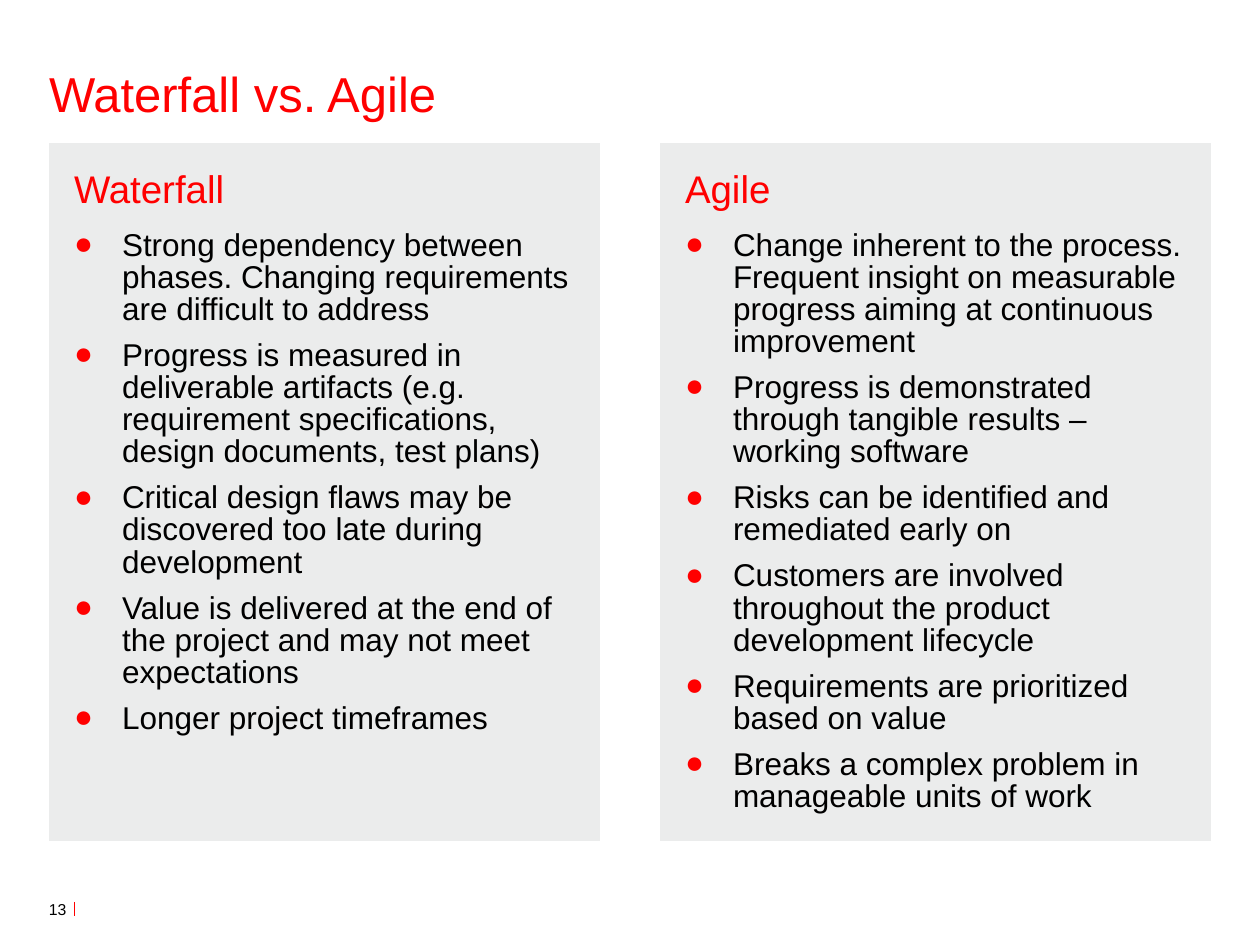
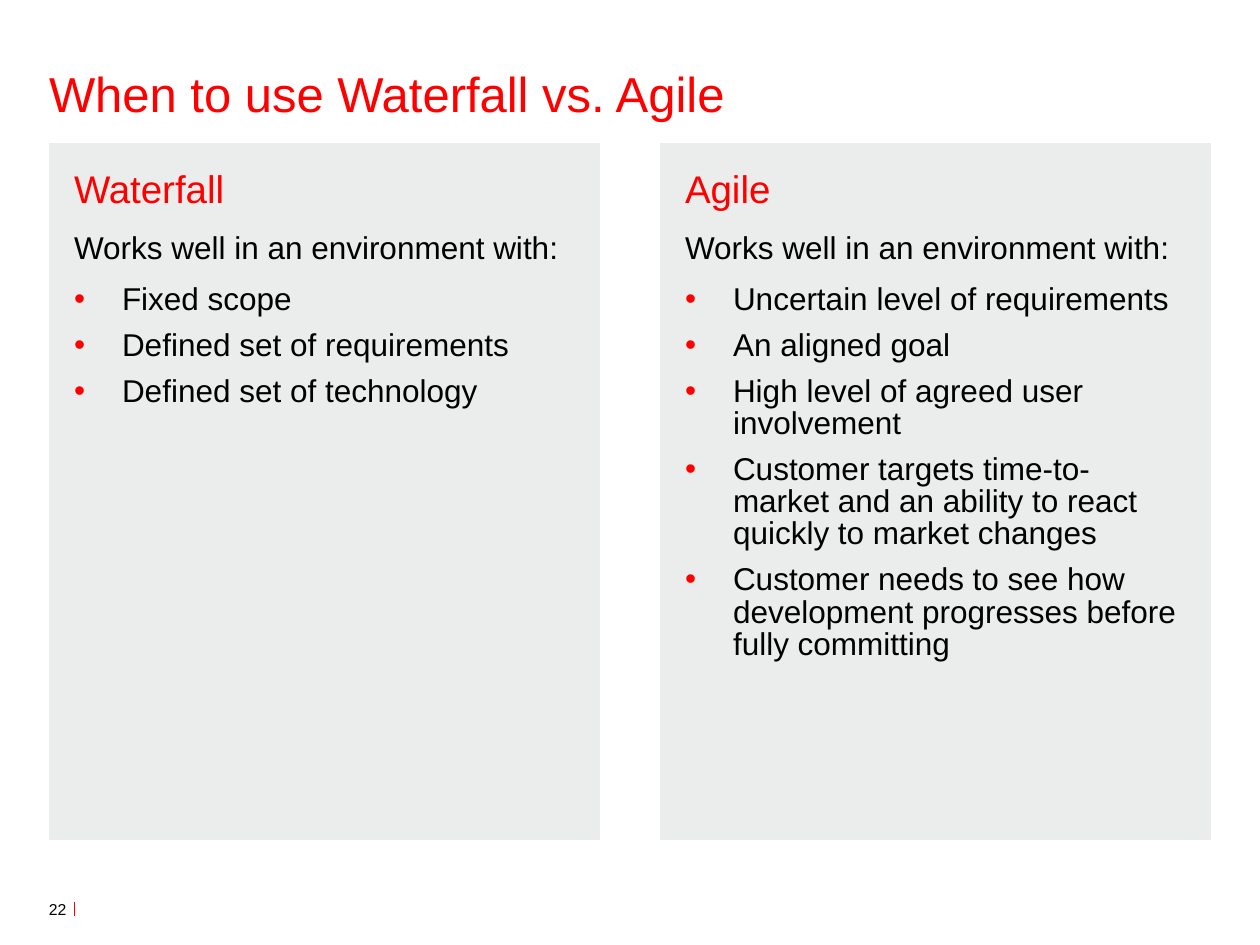
"""Build two slides that compare Waterfall and Agile in paired panels."""
from lxml import etree
from pptx import Presentation
from pptx import util as u
from pptx.dml.color import RGBColor
from pptx.enum import shapes, text
from pptx.oxml.ns import qn

RED = RGBColor(0xFF, 0x00, 0x00)
BLACK = RGBColor(0x00, 0x00, 0x00)
GREY = RGBColor(0xEB, 0xEC, 0xEC)
FONT = "Arial"
LEFT, TOP, WIDE, STEP = 49, 143, 551, 611
PAD, HANG = 25, 48

LEAD = "Works well in an environment with:"
SLIDES = [
    ("Waterfall vs. Agile", "13", "●", 698, [
        ("Waterfall", [], [
            "Strong dependency between phases. Changing requirements are difficult to address",
            "Progress is measured in deliverable artifacts (e.g. requirement specifications, "
            "design documents, test plans)",
            "Critical design flaws may be discovered too late during development",
            "Value is delivered at the end of the project and may not meet expectations",
            "Longer project timeframes"]),
        ("Agile", [], [
            "Change inherent to the process. Frequent insight on measurable progress "
            "aiming at continuous improvement",
            "Progress is demonstrated through tangible results – working software",
            "Risks can be identified and remediated early on",
            "Customers are involved throughout the product development lifecycle",
            "Requirements are prioritized based on value",
            "Breaks a complex problem in manageable units of work"])]),
    ("When to use Waterfall vs. Agile", "22", "•", 697, [
        ("Waterfall", [LEAD], [
            "Fixed scope",
            "Defined set of requirements",
            "Defined set of technology"]),
        ("Agile", [LEAD], [
            "Uncertain level of requirements",
            "An aligned goal",
            "High level of agreed user involvement",
            "Customer targets time-to-market and an ability to react quickly to market changes",
            "Customer needs to see how development progresses before fully committing"])]),
]


def px(n):
    return u.Emu(round(n * 914400 / 126))


def style(frame, pad, anchor, looks):
    frame.word_wrap = True
    frame.auto_size = text.MSO_AUTO_SIZE.NONE
    frame.vertical_anchor = anchor
    frame.margin_left = frame.margin_right = px(pad)
    frame.margin_top = frame.margin_bottom = px(pad)
    for para, (size, color) in zip(frame.paragraphs, looks):
        para.alignment = text.PP_ALIGN.LEFT
        for run in para.runs:
            run.font.name = FONT
            run.font.size = u.Pt(size)
            run.font.color.rgb = color


deck = Presentation()
deck.slide_width, deck.slide_height = px(1260), px(945)

for name, page, mark, high, panels in SLIDES:
    slide = deck.slides.add_slide(deck.slide_layouts[5])

    title = slide.shapes.title
    title.left, title.top, title.width, title.height = px(LEFT), px(58), px(1161), px(69)
    title.text_frame.text = name
    style(title.text_frame, 0, text.MSO_ANCHOR.MIDDLE, [(28, RED)])

    rule = slide.shapes.add_connector(
        shapes.MSO_CONNECTOR.STRAIGHT, px(74), px(902), px(74), px(916))
    rule.line.color.rgb = RED
    rule.line.width = u.Pt(0.5)
    etree.SubElement(rule._element.spPr, qn("a:effectLst"))

    foot = slide.shapes.add_textbox(px(LEFT), px(900), px(25), px(25))
    foot.text_frame.text = page
    style(foot.text_frame, 0, text.MSO_ANCHOR.TOP, [(9, BLACK)])

    for col, (head, leads, points) in enumerate(panels):
        panel = slide.shapes.add_shape(
            shapes.MSO_SHAPE.RECTANGLE, px(LEFT + col * STEP), px(TOP), px(WIDE), px(high))
        panel.shadow.inherit = False
        panel.fill.solid()
        panel.fill.fore_color.rgb = GREY
        panel.line.fill.background()

        frame = panel.text_frame
        lines = [head] + leads + points
        frame.text = "\n".join(lines)
        style(frame, PAD, text.MSO_ANCHOR.TOP, [(22, RED)] + [(18, BLACK)] * (len(lines) - 1))
        first = len(lines) - len(points)
        for para in frame.paragraphs[:first]:
            para.line_spacing = 0.95
            para.space_after = u.Pt(10.6)
        for para in frame.paragraphs[first:]:
            para.level = 1
            para.line_spacing = 0.85
            para.space_after = u.Pt(7.9)
            props = para._p.get_or_add_pPr()
            props.set("marL", str(px(HANG)))
            props.set("indent", str(-px(HANG)))
            tint = etree.SubElement(props, qn("a:buClr"))
            etree.SubElement(tint, qn("a:srgbClr"), val=str(RED))
            etree.SubElement(props, qn("a:buFont"), typeface=FONT)
            etree.SubElement(props, qn("a:buChar"), char=mark)

deck.save("out.pptx")
